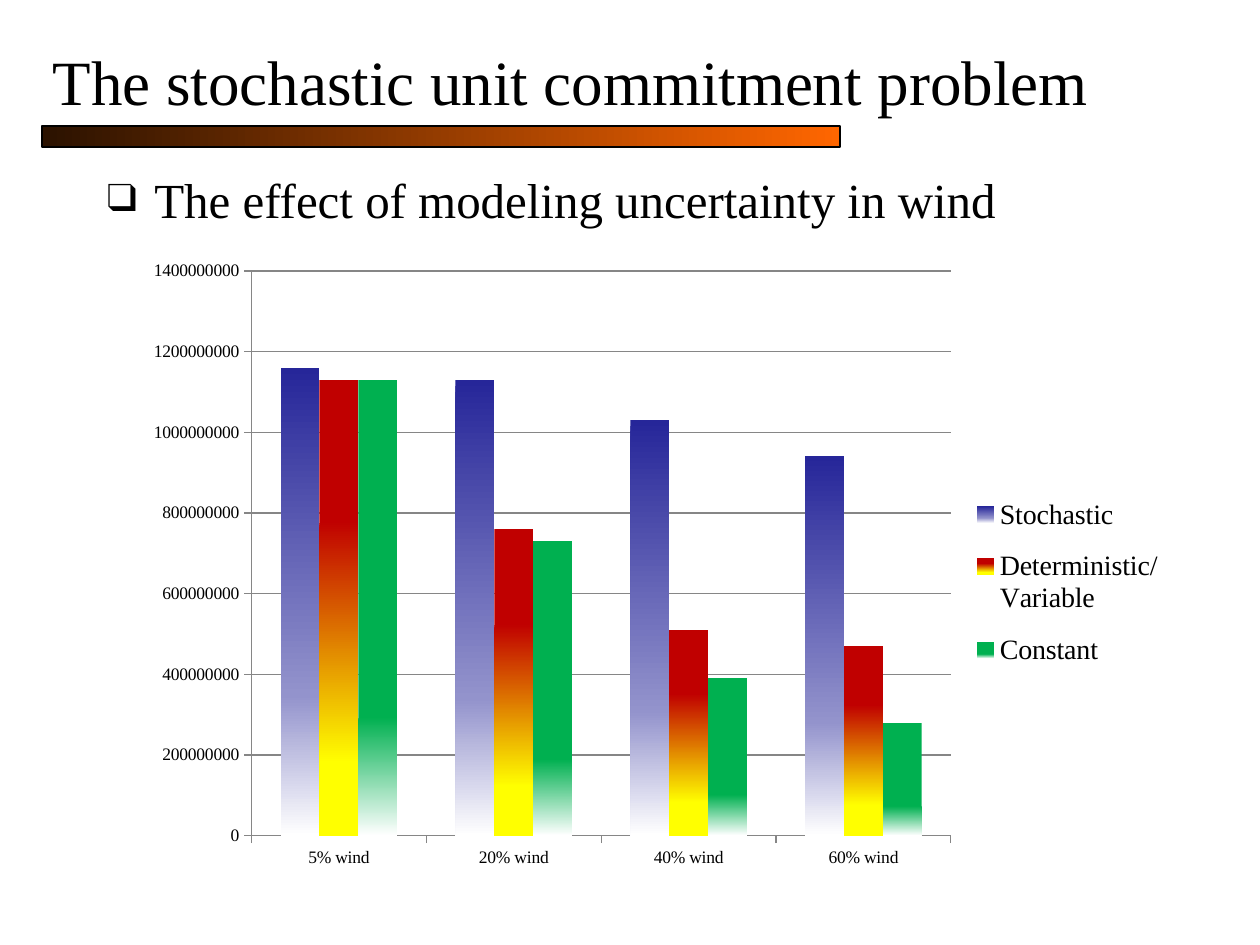
"""Build a slide comparing stochastic unit commitment results by wind share."""
import lxml.etree
import pptx
import pptx.chart.data
import pptx.dml.color
import pptx.enum.chart
import pptx.enum.shapes
import pptx.enum.text
import pptx.oxml.ns
import pptx.util
from dataclasses import dataclass

Pt = pptx.util.Pt
qn = pptx.oxml.ns.qn
SubElement = lxml.etree.SubElement


@dataclass(frozen=True)
class Theme:
    font: str = "Times New Roman"
    ink: str = "000000"
    grid: str = "868686"
    title_size: int = 36
    body_size: int = 28
    legend_size: int = 16
    axis_size: int = 10
    bar: tuple = ((0, "2B1200"), (100, "FF6600"))
    stochastic: tuple = ((0, "262699"), (70, "9393CC"), (100, "FFFFFF"))
    deterministic: tuple = ((31, "C00000"), (84, "FFFF00"), (100, "FFFF00"))
    constant: tuple = ((74, "00B050"), (100, "FFFFFF"))


theme = Theme()
ink = pptx.dml.color.RGBColor.from_string(theme.ink)
grid = pptx.dml.color.RGBColor.from_string(theme.grid)


def write(box, text, size, anchor, bullet=None, indent=0, top=3.6):
    frame = box.text_frame
    frame.word_wrap = True
    frame.auto_size = pptx.enum.text.MSO_AUTO_SIZE.NONE
    frame.vertical_anchor = anchor
    frame.margin_top = Pt(top)
    para = frame.paragraphs[0]
    para.alignment = pptx.enum.text.PP_ALIGN.LEFT
    para.space_before = Pt(0)
    if bullet:
        props = para._p.get_or_add_pPr()
        props.set("marL", str(Pt(indent)))
        props.set("indent", str(-Pt(indent)))
        SubElement(SubElement(props, qn("a:buClr")), qn("a:srgbClr"), val=theme.ink)
        SubElement(props, qn("a:buSzPct"), val="80000")
        SubElement(props, qn("a:buFont"), typeface=theme.font)
        SubElement(props, qn("a:buChar"), char=bullet)
    span = para.add_run()
    span.text = text
    span.font.name = theme.font
    span.font.size = Pt(size)
    span.font.color.rgb = ink


def shade(fill, element, stops, angle):
    fill.gradient()
    fill.gradient_angle = angle
    stop_list = element.find(".//" + qn("a:gsLst"))
    for stop in list(stop_list):
        stop_list.remove(stop)
    for position, color in stops:
        stop = SubElement(stop_list, qn("a:gs"), pos=str(position * 1000))
        SubElement(stop, qn("a:srgbClr"), val=color)


deck = pptx.Presentation()
deck.slide_width, deck.slide_height = Pt(720), Pt(540)
page = deck.slides.add_slide(deck.slide_layouts[1])

bar = page.shapes.add_shape(
    pptx.enum.shapes.MSO_SHAPE.RECTANGLE, Pt(24), Pt(72), Pt(456), Pt(12)
)
bar.shadow.inherit = False
shade(bar.fill, bar._element, theme.bar, 0)
bar.line.color.rgb = ink
bar.line.width = Pt(0.75)

title, body = page.placeholders
title.left, title.top, title.width, title.height = Pt(23), Pt(16.5), Pt(697), Pt(59)
write(title, "The stochastic unit commitment problem", theme.title_size,
      pptx.enum.text.MSO_ANCHOR.MIDDLE)
body.left, body.top, body.width, body.height = Pt(54), Pt(90), Pt(612), Pt(390)
write(body, "The effect of modeling uncertainty in wind", theme.body_size,
      pptx.enum.text.MSO_ANCHOR.TOP, bullet="❑", indent=27, top=6.6)

results = (
    ("Stochastic", (1160000000, 1130000000, 1030000000, 940000000), theme.stochastic),
    ("Deterministic/Variable", (1130000000, 760000000, 510000000, 470000000), theme.deterministic),
    ("Constant", (1130000000, 730000000, 390000000, 280000000), theme.constant),
)
data = pptx.chart.data.CategoryChartData()
data.categories = [f"{share}% wind" for share in (5, 20, 40, 60)]
for name, values, stops in results:
    data.add_series(name, values)
chart = page.shapes.add_chart(
    pptx.enum.chart.XL_CHART_TYPE.COLUMN_CLUSTERED,
    Pt(65), Pt(140), Pt(605.5), Pt(371), data,
).chart
chart.has_title = False
chart.font.name = theme.font
chart.font.size = Pt(theme.axis_size)
chart.font.color.rgb = ink

plot = chart.plots[0]
plot.gap_width = 150
plot.overlap = 0
plot.vary_by_categories = False
for series, (name, values, stops) in zip(plot.series, results):
    shade(series.format.fill, series._element, stops, 270)

for axis in (chart.category_axis, chart.value_axis):
    axis.major_tick_mark = pptx.enum.chart.XL_TICK_MARK.OUTSIDE
    axis.minor_tick_mark = pptx.enum.chart.XL_TICK_MARK.NONE
    axis.format.line.color.rgb = grid
    axis.format.line.width = Pt(0.75)
scale = chart.value_axis
scale.minimum_scale, scale.maximum_scale, scale.major_unit = 0, 1400000000, 200000000
scale.has_major_gridlines = True
scale.major_gridlines.format.line.color.rgb = grid
scale.major_gridlines.format.line.width = Pt(0.75)

chart.has_legend = True
legend = chart.legend
legend.position = pptx.enum.chart.XL_LEGEND_POSITION.RIGHT
legend.include_in_layout = False
legend.font.name = theme.font
legend.font.size = Pt(theme.legend_size)
legend.font.color.rgb = ink

plot_area = chart._chartSpace.find(".//" + qn("c:plotArea"))
for parent, index, inner, area in (
    (plot_area, 0, True, (0.13, 0.04, 0.66, 0.87)),
    (legend._element, 1, False, (0.8, 0.36, 0.2, 0.32)),
):
    for old in parent.findall(qn("c:layout")):
        parent.remove(old)
    layout = lxml.etree.Element(qn("c:layout"))
    parent.insert(index, layout)
    manual = SubElement(layout, qn("c:manualLayout"))
    if inner:
        SubElement(manual, qn("c:layoutTarget"), val="inner")
    for key in ("xMode", "yMode"):
        SubElement(manual, qn("c:" + key), val="edge")
    for key, value in zip("xywh", area):
        SubElement(manual, qn("c:" + key), val=str(value))

deck.save("out.pptx")
